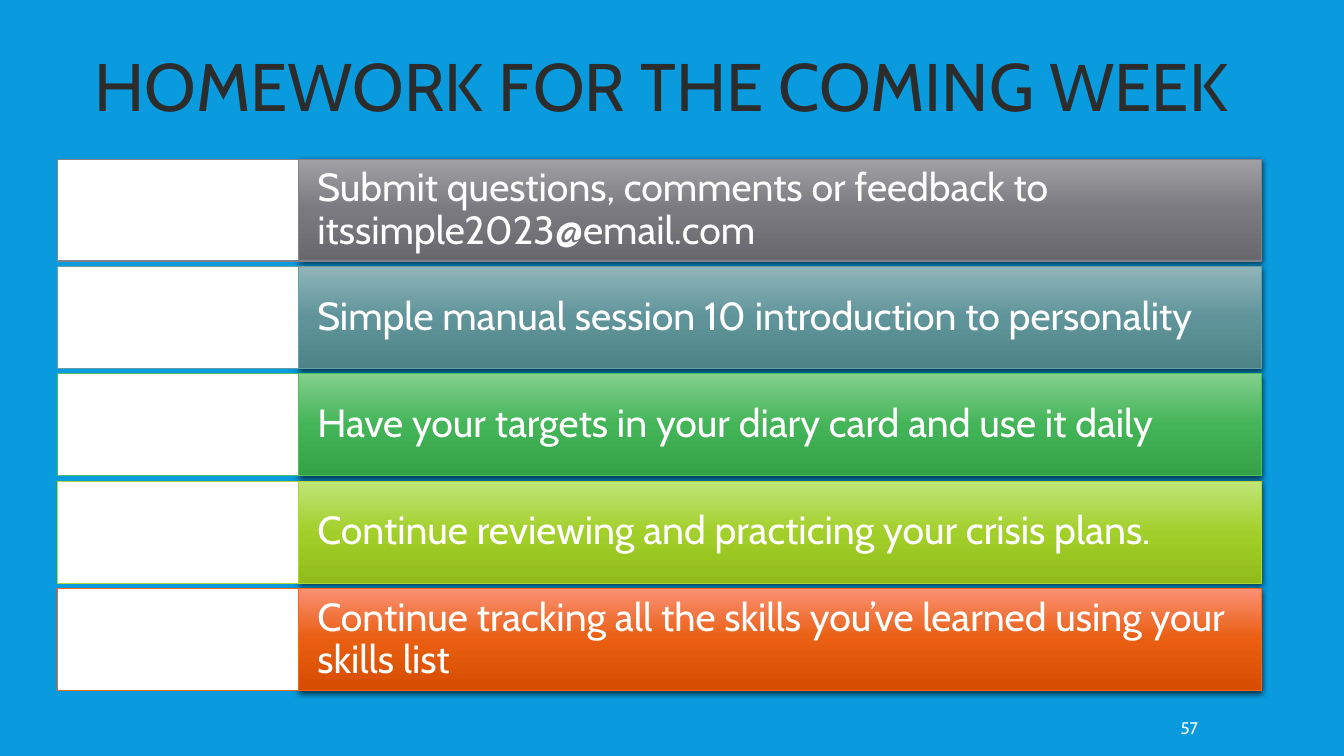
"""Builds the homework slide: a title, five coloured task rows and a page number."""
from copy import deepcopy

from lxml import etree
from pptx import Presentation
from pptx.dml.color import RGBColor
from pptx.enum import shapes, text
from pptx.oxml.ns import qn
from pptx.util import Inches, Pt

FONT = "Cabin"
BLUE = RGBColor(0x09, 0x9B, 0xDD)
INK = RGBColor(0x2C, 0x2C, 0x2C)
WHITE = RGBColor(0xFF, 0xFF, 0xFF)

TASKS = [
    ("Submit questions, comments or feedback to itssimple2023@email.com",
     "828288", ("A1A1A5", "79797F", "68686D")),
    ("Simple manual session 10 introduction to personality",
     "679EA3", ("90B5B9", "5F949A", "4E8388")),
    ("Have your targets in your diary card and use it daily",
     "4CBF61", ("82CF8C", "44B458", "34A247")),
    ("Continue reviewing and practicing your crisis plans.",
     "ADDA32", ("C0E578", "A3CF2A", "91BC1A")),
    ("Continue tracking all the skills you’ve learned using your skills list",
     "F56617", ("FB9074", "E95E10", "D64D01")),
]


def write(shape, words, size, color, align=text.PP_ALIGN.LEFT, spacing=1.0,
          insets=(0.1, 0.05, 0.1, 0.05)):
    """Put one formatted paragraph into a shape, centred vertically."""
    frame = shape.text_frame
    frame.word_wrap = True
    frame.vertical_anchor = text.MSO_ANCHOR.MIDDLE
    (frame.margin_left, frame.margin_top,
     frame.margin_right, frame.margin_bottom) = map(Inches, insets)
    para = frame.paragraphs[0]
    para.alignment = align
    para.line_spacing = spacing
    span = para.add_run()
    span.text = words
    span.font.name = FONT
    span.font.size = Pt(size)
    span.font.color.rgb = color


def add_panel(page, left, top, width, height, edge):
    """Add an outlined rectangle without a shadow."""
    panel = page.shapes.add_shape(shapes.MSO_SHAPE.RECTANGLE, Inches(left),
                                  Inches(top), Inches(width), Inches(height))
    panel.shadow.inherit = False
    panel.line.color.rgb = edge
    panel.line.width = Pt(0.75)
    return panel


def fill_gradient(shape, colors):
    """Fill a shape from top to bottom with three evenly spaced colours."""
    fill = shape.fill
    fill.gradient()
    fill.gradient_angle = 270
    stops = shape._element.spPr.find(qn("a:gradFill")).find(qn("a:gsLst"))
    stops.insert(1, deepcopy(stops[0]))
    for index, (stop, color) in enumerate(zip(fill.gradient_stops, colors)):
        stop.position = index / 2
        stop.color.rgb = RGBColor.from_string(color)


def drop_shadow(shape):
    """Give a shape a soft black shadow below it."""
    effects = shape._element.spPr.find(qn("a:effectLst"))
    shadow = etree.SubElement(effects, qn("a:outerShdw"), blurRad=str(Pt(4)),
                              dist=str(Pt(1.2)), dir="5400000",
                              algn="ctr", rotWithShape="0")
    black = etree.SubElement(shadow, qn("a:srgbClr"), val="000000")
    etree.SubElement(black, qn("a:alpha"), val="68000")


def add_task(page, left, top, width, height, task):
    """Add a row: a white tile on the left and a gradient bar with its task."""
    words, edge, colors = task
    edge = RGBColor.from_string(edge)
    tile_width = width / 5
    bar = add_panel(page, left + tile_width, top, width - tile_width, height, edge)
    fill_gradient(bar, colors)
    drop_shadow(bar)
    write(bar, words, 28, WHITE, spacing=0.9, insets=(0.19, 0.26, 0.19, 0.26))
    tile = add_panel(page, left, top, tile_width, height, edge)
    tile.fill.solid()
    tile.fill.fore_color.rgb = WHITE


def add_tasks(page, left, top, width, height):
    """Stack the task rows with equal gaps in the given box."""
    row_height = 1.01
    pitch = (height - row_height) / (len(TASKS) - 1)
    for index, task in enumerate(TASKS):
        add_task(page, left, top + index * pitch, width, row_height, task)


def add_label(page, left, top, width, height, words, **style):
    """Add a text box with one formatted paragraph."""
    box = page.shapes.add_textbox(Inches(left), Inches(top),
                                  Inches(width), Inches(height))
    write(box, words, **style)


def main():
    """Build and save the slide."""
    deck = Presentation()
    deck.slide_width, deck.slide_height = Inches(13.33), Inches(7.5)
    page = deck.slides.add_slide(deck.slide_layouts[6])
    page.background.fill.solid()
    page.background.fill.fore_color.rgb = BLUE
    add_label(page, 0.36, 0.39, 12.55, 1.02, "HOMEWORK FOR THE COMING WEEK ",
              size=48, color=INK, align=text.PP_ALIGN.CENTER, spacing=0.85)
    add_tasks(page, 0.57, 1.58, 11.94, 5.27)
    add_label(page, 11.66, 7.02, 1.03, 0.4, "57", size=12, color=WHITE,
              insets=(0.05, 0.05, 0.1, 0.05))
    deck.save("out.pptx")


if __name__ == "__main__":
    main()
